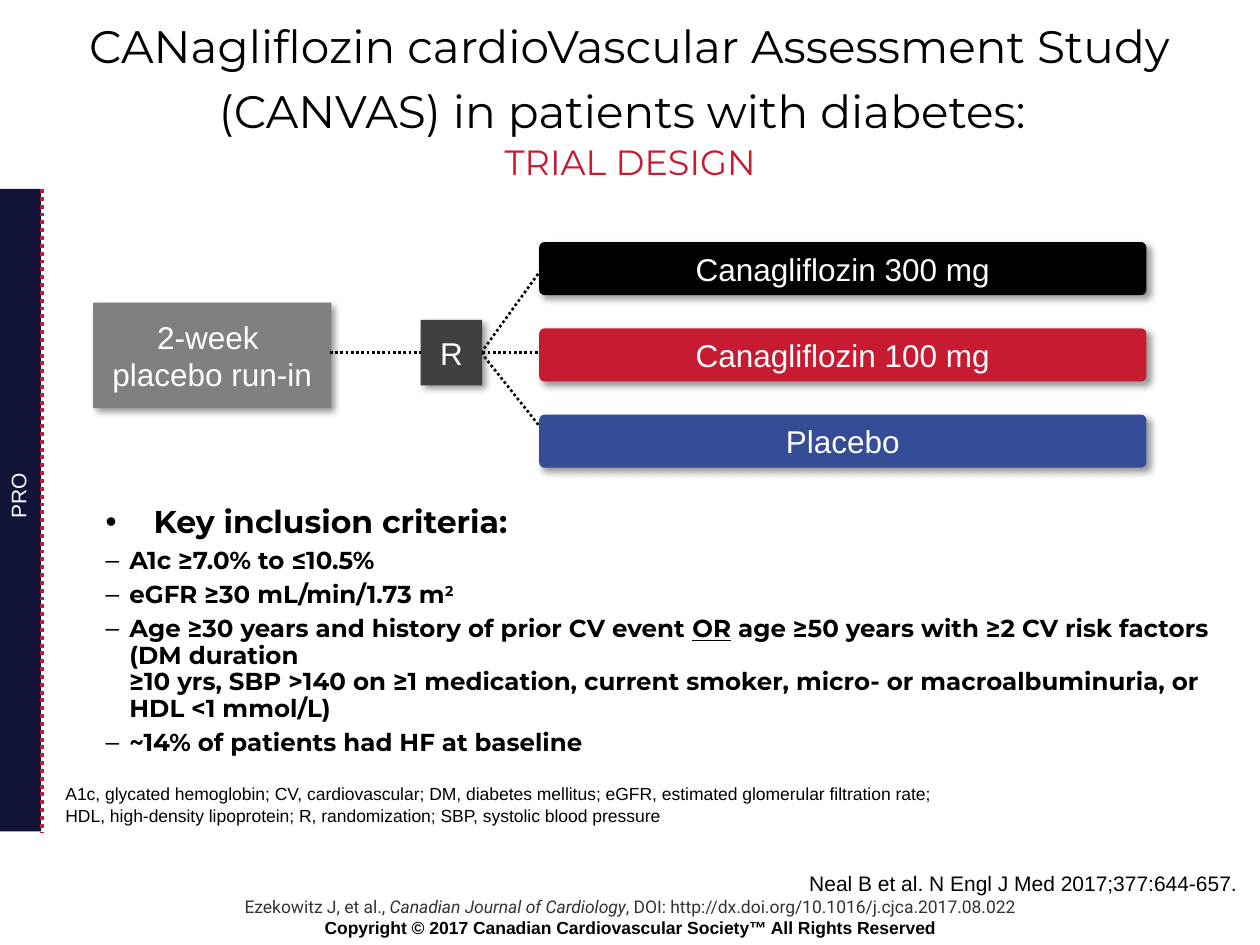
from dataclasses import dataclass

from lxml.etree import SubElement
from pptx import Presentation
from pptx.dml.color import RGBColor
from pptx.enum.dml import MSO_LINE
from pptx.enum.shapes import MSO_CONNECTOR, MSO_SHAPE
from pptx.enum.text import MSO_ANCHOR, PP_ALIGN
from pptx.oxml.ns import qn
from pptx.util import Cm, Pt


@dataclass(frozen=True)
class Theme:
    black: str = "000000"
    white: str = "FFFFFF"
    red: str = "C71B32"
    blue: str = "354C97"
    navy: str = "111338"
    mid_gray: str = "808080"
    dark_gray: str = "404040"
    footer_gray: str = "333333"
    body_font: str = "Arial"
    heading_font: str = "Montserrat"
    footer_font: str = "Roboto"
    title: float = 26
    title_gap: float = 32
    subtitle: float = 20
    label: float = 18
    criterion: float = 14
    note: float = 12
    small: float = 10


class TrialSlide:
    def __init__(self, slide, theme):
        self.shapes = slide.shapes
        self.theme = theme

    def add_runs(self, paragraph, runs, **style):
        """Add (text, overrides) runs; a newline in the text is a line break."""
        for text, overrides in runs:
            look = {**style, **overrides}
            for index, line in enumerate(text.split("\n")):
                if index:
                    paragraph.add_line_break()
                if not line:
                    continue
                run = paragraph.add_run()
                run.text = line
                font = run.font
                font.name = look.get("font", self.theme.body_font)
                font.size = Pt(look["size"])
                font.color.rgb = RGBColor.from_string(look.get("color", self.theme.black))
                font.bold = look.get("bold", False)
                font.italic = look.get("italic", False)
                font.underline = look.get("underline", False)
                if look.get("superscript"):
                    run._r.get_or_add_rPr().set("baseline", "30000")

    def text(self, box, paragraphs, align=PP_ALIGN.LEFT, anchor=MSO_ANCHOR.TOP,
             wrap=True, rotation=0, **style):
        """Add a text box holding a list of paragraphs, each a list of runs."""
        area = self.shapes.add_textbox(*map(Cm, box))
        area.rotation = rotation
        frame = area.text_frame
        frame.word_wrap = wrap
        frame.vertical_anchor = anchor
        for index, runs in enumerate(paragraphs):
            paragraph = frame.add_paragraph() if index else frame.paragraphs[0]
            paragraph.alignment = align
            self.add_runs(paragraph, runs, **style)
        return frame

    def bullet(self, paragraph, mark, indent):
        paragraph.line_spacing = 0.9
        paragraph.space_after = Pt(2.2)
        properties = paragraph._p.get_or_add_pPr()
        properties.set("marL", str(Cm(indent)))
        properties.set("indent", str(-Cm(indent)))
        SubElement(properties, qn("a:buFont")).set("typeface", self.theme.body_font)
        SubElement(properties, qn("a:buChar")).set("char", mark)

    def criteria(self, box, heading, items):
        style = dict(font=self.theme.heading_font, bold=True)
        frame = self.text(box, [])
        first = frame.paragraphs[0]
        self.bullet(first, "•", 0.97)
        self.add_runs(first, [(heading, {})], size=self.theme.label, **style)
        for runs in items:
            paragraph = frame.add_paragraph()
            paragraph.level = 1
            paragraph.space_before = Pt(2.2)
            self.bullet(paragraph, "–", 0.48)
            self.add_runs(paragraph, runs, size=self.theme.criterion, **style)

    def panel(self, box, fill, preset=MSO_SHAPE.RECTANGLE):
        panel = self.shapes.add_shape(preset, *map(Cm, box))
        panel.shadow.inherit = False
        panel.fill.solid()
        panel.fill.fore_color.rgb = RGBColor.from_string(fill)
        panel.line.fill.background()
        return panel

    def step(self, box, label, fill, rounded=False):
        """Add a labelled trial step with a soft shadow."""
        preset = MSO_SHAPE.ROUNDED_RECTANGLE if rounded else MSO_SHAPE.RECTANGLE
        step = self.panel(box, fill, preset)
        if rounded:
            step.adjustments[0] = 0.1
        effects = step._element.spPr.find(qn("a:effectLst"))
        shadow = SubElement(effects, qn("a:outerShdw"), blurRad=str(Pt(4)),
                            dist=str(Pt(3)), dir="2700000", algn="tl", rotWithShape="0")
        color = SubElement(shadow, qn("a:srgbClr"), val=self.theme.black)
        SubElement(color, qn("a:alpha"), val="40000")
        frame = step.text_frame
        frame.word_wrap = True
        frame.vertical_anchor = MSO_ANCHOR.MIDDLE
        frame.margin_left = frame.margin_right = Cm(0.1)
        paragraph = frame.paragraphs[0]
        paragraph.alignment = PP_ALIGN.CENTER
        self.add_runs(paragraph, [(label, {})], size=self.theme.label, color=self.theme.white)

    def dotted_line(self, start, end, color, width=1.5):
        line = self.shapes.add_connector(MSO_CONNECTOR.STRAIGHT, *map(Cm, (*start, *end)))
        line.line.color.rgb = RGBColor.from_string(color)
        line.line.width = Pt(width)
        line.line.dash_style = MSO_LINE.ROUND_DOT
        SubElement(line._element.spPr, qn("a:effectLst"))


def main():
    theme = Theme()
    deck = Presentation()
    deck.slide_width, deck.slide_height = Cm(25.4), Cm(19.05)
    page = TrialSlide(deck.slides.add_slide(deck.slide_layouts[6]), theme)

    page.text((2.92, 17.93, 19.56, 1.12), [
        [("Ezekowitz J, et al., ", {}),
         ("Canadian Journal of Cardiology", {"italic": True}),
         (", DOI: http://dx.doi.org/10.1016/j.cjca.2017.08.022", {})],
        [("Copyright © 2017 Canadian Cardiovascular Society™ All Rights Reserved",
          {"font": theme.body_font, "color": theme.black, "bold": True})],
    ], align=PP_ALIGN.CENTER, size=theme.small, font=theme.footer_font, color=theme.footer_gray)

    page.text((0.13, 0.71, 25.15, 2.62), [[
        ("CANagliflozin cardioVascular Assessment Study (CANVAS) in patients with diabetes:", {}),
        (" \n", {"size": theme.title_gap}),
        ("TRIAL DESIGN", {"size": theme.subtitle, "color": theme.red}),
    ]], align=PP_ALIGN.CENTER, anchor=MSO_ANCHOR.MIDDLE, size=theme.title, font=theme.heading_font)

    page.criteria((1.88, 10.08, 23.37, 5.26), "Key inclusion criteria:", [
        [("A1c ≥7.0% to ≤10.5%", {})],
        [("eGFR ≥30 mL/min/1.73 m", {}), ("2", {"superscript": True})],
        [("Age ≥30 years and history of prior CV event ", {}),
         ("OR", {"underline": True}),
         (" age ≥50 years with ≥2 CV risk factors (DM duration \n≥10 yrs, SBP >140 on "
          "≥1 medication, current smoker, micro- or macroalbuminuria, or HDL <1 mmol/L)", {})],
        [("~14% of patients had HF at baseline", {})],
    ])

    page.text((1.07, 15.67, 18.64, 1.12), [[(
        "A1c, glycated hemoglobin; CV, cardiovascular; DM, diabetes mellitus; "
        "eGFR, estimated glomerular filtration rate; HDL, high-density lipoprotein; "
        "R, randomization; SBP, systolic blood pressure", {})]], size=theme.small)

    middle, arm_left, arm_top, arm_pitch = 7.11, 10.87, 4.88, 1.74
    randomized = (9.7, middle)
    page.step((1.88, 6.1, 4.8, 2.13), "2-week \nplacebo run-in", theme.mid_gray)
    page.dotted_line((6.65, middle), (arm_left, middle), theme.black)
    for arm_entry in ((11, 5.31), (10.97, 8.71)):
        page.dotted_line(randomized, arm_entry, theme.black)
    page.step((8.48, 6.45, 1.24, 1.32), "R", theme.dark_gray)
    arms = [("Canagliflozin 300 mg", theme.black),
            ("Canagliflozin 100 mg", theme.red),
            ("Placebo", theme.blue)]
    for index, (treatment, fill) in enumerate(arms):
        page.step((arm_left, arm_top + index * arm_pitch, 12.24, 1.07), treatment, fill, rounded=True)

    page.panel((-0.03, 3.81, 0.86, 12.95), theme.navy)
    page.dotted_line((0.84, 3.81), (0.84, 16.79), theme.red, width=2.25)
    page.text((-0.36, 9.6, 1.45, 0.76), [[("PRO", {})]], wrap=False, rotation=270,
              size=theme.note, color=theme.white)
    page.text((15.67, 17.42, 9.53, 0.76), [[("Neal B et al. N Engl J Med 2017;377:644-657.", {})]],
              align=PP_ALIGN.RIGHT, size=theme.note)

    deck.save("out.pptx")


if __name__ == "__main__":
    main()
